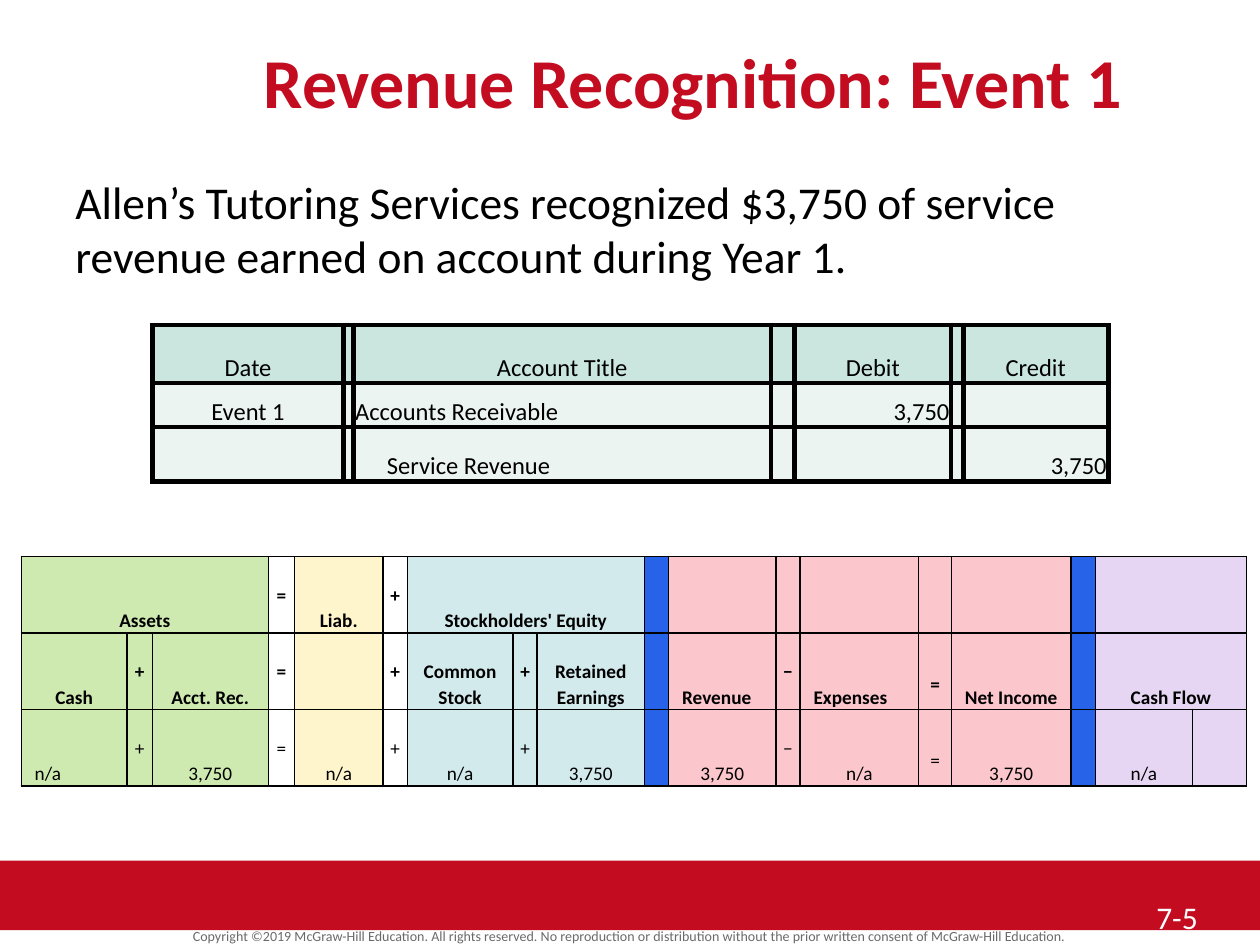
import pptx
import pptx.util
import pptx.dml.color
import pptx.enum.shapes
import pptx.enum.text
from lxml import etree

Cm = pptx.util.Cm
Pt = pptx.util.Pt
RGBColor = pptx.dml.color.RGBColor
PP_ALIGN = pptx.enum.text.PP_ALIGN
MSO_ANCHOR = pptx.enum.text.MSO_ANCHOR
LEFT, CENTER, RIGHT = PP_ALIGN.LEFT, PP_ALIGN.CENTER, PP_ALIGN.RIGHT

RED = RGBColor(0xC3, 0x0C, 0x20)
GREY = RGBColor(0x6A, 0x6A, 0x6A)
BLACK = RGBColor(0, 0, 0)
WHITE = RGBColor(0xFF, 0xFF, 0xFF)
MINT = RGBColor(0xCA, 0xE6, 0xDE)
PALE_MINT = RGBColor(0xEC, 0xF4, 0xF1)
GREEN = RGBColor(0xCE, 0xEA, 0xB0)
YELLOW = RGBColor(0xFF, 0xF5, 0xCC)
TEAL = RGBColor(0xD3, 0xEA, 0xED)
BLUE = RGBColor(0x27, 0x63, 0xE9)
PINK = RGBColor(0xFB, 0xC6, 0xCC)
LILAC = RGBColor(0xE6, 0xD5, 0xF3)

FONT = "Calibri"
TEXTS = [
    ("Copyright ©2019 McGraw-Hill Education. All rights reserved. No reproduction or distribution "
     "without the prior written consent of McGraw-Hill Education.",
     (0, 18.64, 25.4, 0.48), 8, GREY, False, CENTER, 0.8),
    ("Revenue Recognition: Event 1", (2.54, 0.66, 22.86, 1.7), 40, RED, True, CENTER, 1),
    ("Allen’s Tutoring Services recognized $3,750 of service revenue earned on account during Year 1.",
     (1.27, 3.38, 22.86, 13.13), 26, BLACK, False, LEFT, 1),
    ("7-5", (23.06, 17.98, 2.34, 1.07), 18, WHITE, False, LEFT, 1),
]

JOURNAL = [
    ["Date", "", "Account Title", "", "Debit", "", "Credit"],
    ["Event 1", "", "Accounts Receivable", "", "3,750", "", ""],
    ["", "", "Service Revenue", "", "", "", "3,750"],
]
JOURNAL_COLS = [3.86, 0.2, 8.41, 0.48, 3.15, 0.25, 2.92]
JOURNAL_ROWS = [1.17, 0.89, 1.09]

EQUATION = [
    ["Assets", "", "", "=", "Liab.", "+", "Stockholders' Equity", "", "", "",
     "", "", "", "", "", "", "", ""],
    ["Cash", "+", "Acct. Rec.", "=", "", "+", "Common Stock", "+", "Retained Earnings", "",
     "Revenue", "−", "Expenses", "=", "Net Income", "", "Cash Flow", ""],
    ["n/a", "+", "3,750", "=", "n/a", "+", "n/a", "+", "3,750", "",
     "3,750", "−", "n/a", "=", "3,750", "", "n/a", ""],
]
EQUATION_COLS = [2.13, 0.51, 2.34, 0.53, 1.78, 0.49, 2.13, 0.49, 2.16, 0.49,
                 2.16, 0.49, 2.39, 0.66, 2.41, 0.49, 1.96, 1.09]
EQUATION_ROWS = [1.54] * 3
EQUATION_FILLS = ([GREEN] * 3 + [None, YELLOW, None] + [TEAL] * 3 + [BLUE]
                  + [PINK] * 5 + [BLUE] + [LILAC] * 2)
EQUATION_MERGES = [(0, 0, 2), (0, 6, 8), (0, 16, 17), (1, 16, 17)]
LEFT_LABELS = [(1, 10), (1, 12), (2, 0)]
NET_INCOME_SIGN = 13


def add_text(s, text, box, size, color, bold, align, spacing):
    tf = s.shapes.add_textbox(*map(Cm, box)).text_frame
    tf.word_wrap = True
    p = tf.paragraphs[0]
    p.text = text
    p.alignment = align
    p.line_spacing = spacing
    set_font(p, size, bold, color)


def set_font(p, size, bold, color=BLACK):
    p.font.name = FONT
    p.font.size = Pt(size)
    p.font.bold = bold
    p.font.color.rgb = color


def add_borders(cell, width):
    tcPr = cell._tc.get_or_add_tcPr()
    for side in ("lnL", "lnR", "lnT", "lnB"):
        ln = etree.SubElement(tcPr, pptx.oxml.ns.qn("a:" + side), w=str(Pt(width)))
        fill = etree.SubElement(ln, pptx.oxml.ns.qn("a:solidFill"))
        etree.SubElement(fill, pptx.oxml.ns.qn("a:srgbClr"), val=str(BLACK))


def add_grid(s, left, top, rows, widths, heights, border, style):
    frame = s.shapes.add_table(len(rows), len(widths), Cm(left), Cm(top),
                               Cm(sum(widths)), Cm(sum(heights)))
    table = frame.table
    table.first_row = table.horz_banding = False
    for column, width in zip(table.columns, widths):
        column.width = Cm(width)
    for i, row in enumerate(rows):
        table.rows[i].height = Cm(heights[i])
        for j, text in enumerate(row):
            cell = table.cell(i, j)
            add_borders(cell, border)
            fill, align, size, bold, spacing, margins = style(i, j, text)
            if fill is None:
                cell.fill.background()
            else:
                cell.fill.solid()
                cell.fill.fore_color.rgb = fill
            cell.vertical_anchor = MSO_ANCHOR.BOTTOM
            cell.margin_top = 0
            cell.margin_left, cell.margin_right, cell.margin_bottom = map(Cm, margins)
            p = cell.text_frame.paragraphs[0]
            p.text = text
            p.alignment = align
            p.line_spacing = spacing
            set_font(p, size, bold)
    return table


def journal_style(i, j, text):
    if i == 0 or j == 0:
        align = CENTER
    else:
        align = LEFT if j == 2 else RIGHT
    indent = 0.67 if (i, j) == (2, 2) else 0.03
    return MINT if i == 0 else PALE_MINT, align, 14, False, 1, (indent, 0.03, 0)


def equation_style(i, j, text):
    align, margins = CENTER, (0.2, 0.2, 0)
    if text in ("+", "−", "="):
        margins = (0, 0, 0.26 if j == NET_INCOME_SIGN else 0.51)
    elif (i, j) in LEFT_LABELS:
        align, margins = LEFT, (0.27, 0, 0)
    elif not text:
        margins = (0, 0, 0)
    return EQUATION_FILLS[j], align, 11, i < 2, 1.07, margins


prs = pptx.Presentation()
prs.slide_width, prs.slide_height = Cm(25.4), Cm(19.05)
s = prs.slides.add_slide(prs.slide_layouts[6])

bar = s.shapes.add_shape(pptx.enum.shapes.MSO_SHAPE.RECTANGLE, 0, Cm(17.35), Cm(25.4), Cm(1.4))
bar.shadow.inherit = False
bar.fill.solid()
bar.fill.fore_color.rgb = RED
bar.line.fill.background()

for item in TEXTS:
    add_text(s, *item)

equation = add_grid(s, 0.43, 11.22, EQUATION, EQUATION_COLS, EQUATION_ROWS, 1, equation_style)
for row, first, last in EQUATION_MERGES:
    equation.cell(row, first).merge(equation.cell(row, last))
add_grid(s, 3.07, 6.55, JOURNAL, JOURNAL_COLS, JOURNAL_ROWS, 3, journal_style)

prs.save("out.pptx")
